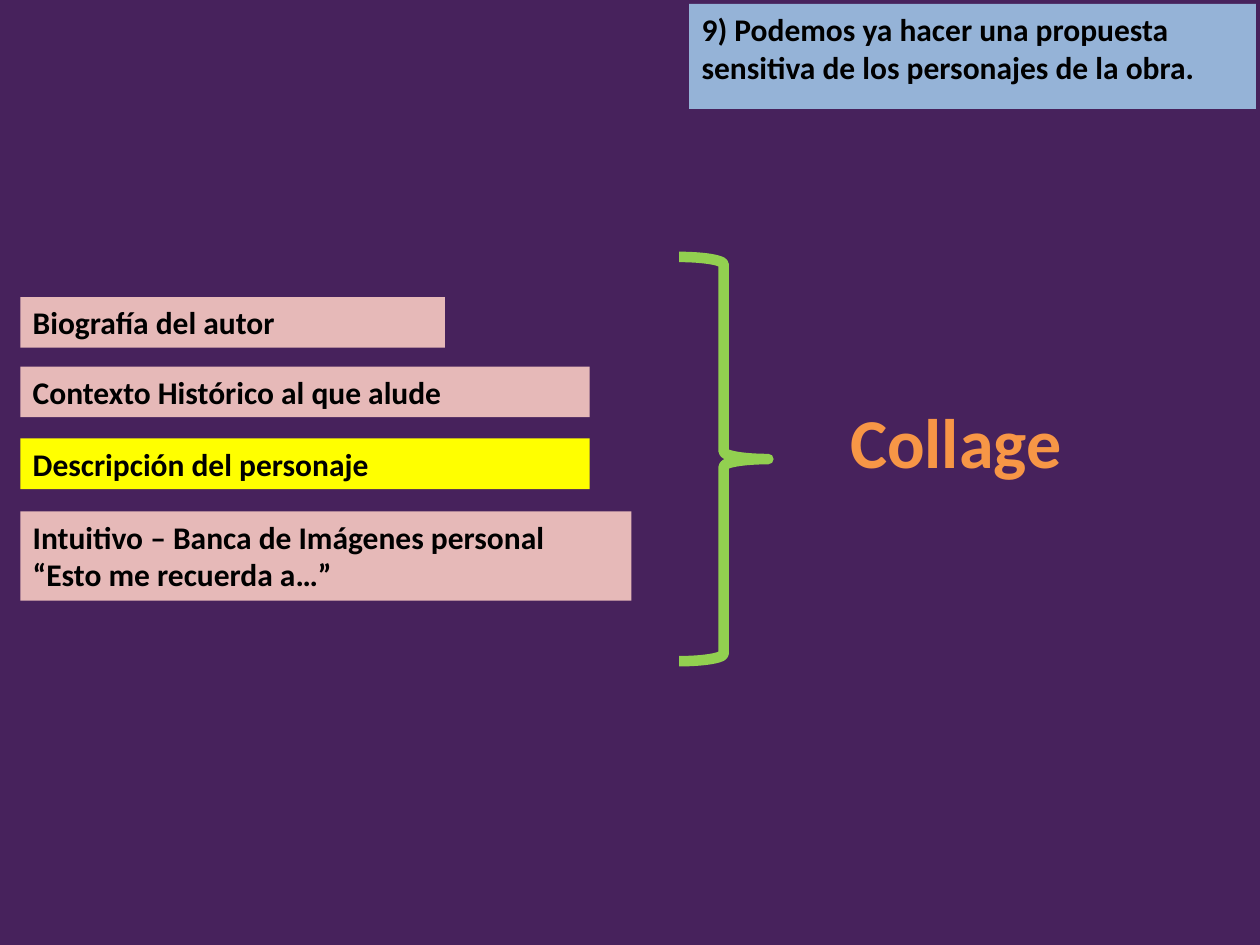
"""Build the slide on the sensory proposal for the characters of a play."""
from dataclasses import dataclass

from pptx import Presentation
from pptx.dml.color import RGBColor
from pptx.enum.shapes import MSO_SHAPE as Preset
from pptx.enum.text import MSO_ANCHOR as Anchor, MSO_AUTO_SIZE as AutoSize, PP_ALIGN as Align
from pptx.shapes.base import BaseShape
from pptx.slide import Slide
from pptx.util import Cm, Pt

PURPLE, PINK, YELLOW, BLUE = "47225C", "E6B9B8", "FFFF00", "95B3D7"
GREEN, ORANGE, BLACK = "92D050", "F79646", "000000"
SOURCES_LEFT = 0.41


@dataclass(frozen=True)
class Source:
    text: str
    top: float
    width: float
    height: float = 1.02
    fill: str = PINK


SOURCES = (
    Source("Biografía del autor", 5.99, 8.56),
    Source("Contexto Histórico al que alude", 7.39, 11.48),
    Source("Descripción del personaje", 8.84, 11.48, fill=YELLOW),
    Source("Intuitivo – Banca de Imágenes personal\n“Esto me recuerda a…”", 10.31, 12.32, 1.8),
)


def color(hex_code: str) -> RGBColor:
    return RGBColor.from_string(hex_code)


def paint(shape: BaseShape, hex_code: str) -> None:
    shape.fill.solid()
    shape.fill.fore_color.rgb = color(hex_code)


def write(shape: BaseShape, text: str, *, size: float = 18, ink: str = BLACK) -> None:
    frame = shape.text_frame
    frame.text = text
    frame.word_wrap = True
    frame.auto_size = AutoSize.SHAPE_TO_FIT_TEXT
    frame.vertical_anchor = Anchor.TOP
    for paragraph in frame.paragraphs:
        paragraph.alignment = Align.LEFT
        font = paragraph.font
        font.name, font.size, font.bold = "Calibri", Pt(size), True
        font.color.rgb = color(ink)


def add_source(slide: Slide, source: Source) -> None:
    box = slide.shapes.add_shape(
        Preset.RECTANGLE, Cm(SOURCES_LEFT), Cm(source.top), Cm(source.width), Cm(source.height))
    box.shadow.inherit = False
    box.line.fill.background()
    paint(box, source.fill)
    write(box, source.text)


def add_brace(slide: Slide) -> None:
    brace = slide.shapes.add_shape(Preset.RIGHT_BRACE, Cm(13.69), Cm(5.18), Cm(1.8), Cm(8.15))
    brace.shadow.inherit = False
    brace.fill.background()
    brace.line.color.rgb = color(GREEN)
    brace.line.width = Pt(6)


def main() -> None:
    deck = Presentation()
    deck.slide_width, deck.slide_height = Cm(25.4), Cm(19.05)
    slide = deck.slides.add_slide(deck.slide_layouts.get_by_name("Title Only"))
    paint(slide.background, PURPLE)

    step = slide.shapes.title
    step.left, step.top, step.width, step.height = Cm(13.89), Cm(0.08), Cm(11.43), Cm(1.8)
    paint(step, BLUE)
    write(step, "9) Podemos ya hacer una propuesta sensitiva de los personajes de la obra.")

    for source in SOURCES:
        add_source(slide, source)
    add_brace(slide)

    result = slide.shapes.add_textbox(Cm(16.89), Cm(7.9), Cm(5.99), Cm(2.74))
    write(result, "Collage", size=40, ink=ORANGE)

    deck.save("out.pptx")


if __name__ == "__main__":
    main()
